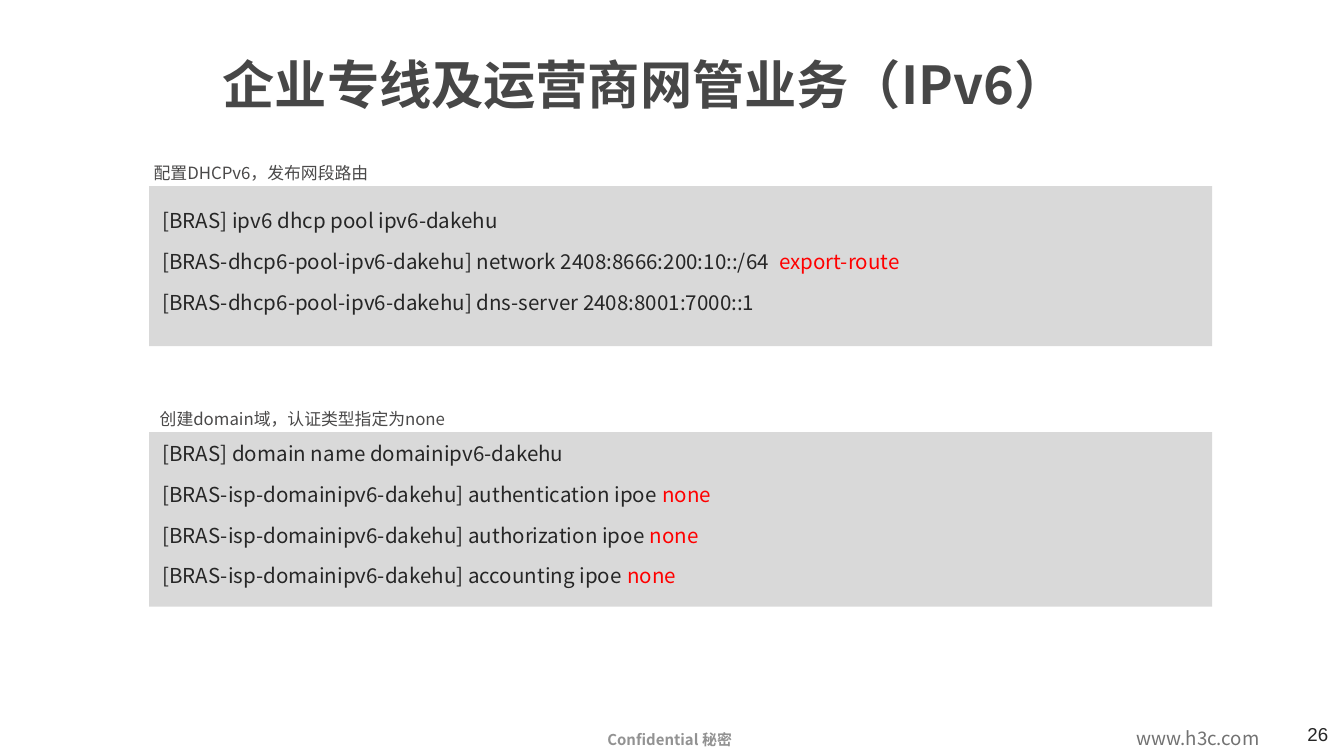
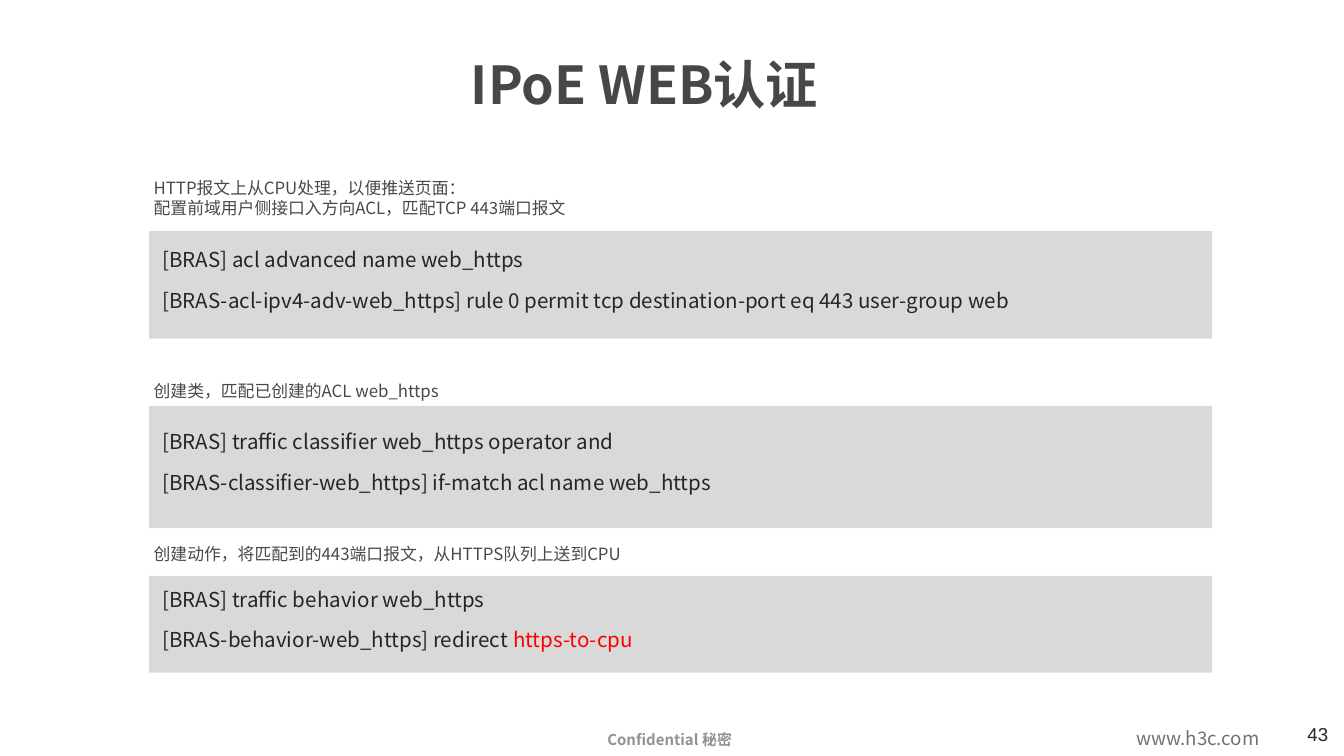
"""Build two slides of BRAS configuration steps with captions and command panels."""
from dataclasses import dataclass

from lxml.etree import SubElement
from pptx import Presentation
from pptx.dml.color import RGBColor
from pptx.enum.shapes import MSO_SHAPE as SHAPE
from pptx.enum.text import MSO_ANCHOR as ANCHOR, MSO_AUTO_SIZE as AUTO, PP_ALIGN as ALIGN
from pptx.oxml.ns import qn
from pptx.util import Emu, Pt


@dataclass(frozen=True)
class Style:
    size: int
    color: str
    bold: bool = False
    font: str = "Noto Sans CJK SC"


@dataclass(frozen=True)
class Theme:
    title: Style = Style(28, "474747", True)
    caption: Style = Style(9, "4A4949")
    code: Style = Style(11, "262626")
    secret: Style = Style(8, "929292", True)
    site: Style = Style(10, "727272")
    page: Style = Style(10, "262626", font="Arial")
    panel: str = "D9D9D9"
    accent: str = "FF0000"


THEME = Theme()
EMU_PER_PX = 4572
SLIDE_SIZE = 2000, 1125
TITLE_BOX = 100, 74, 1718, 100
PANEL_LEFT, PANEL_WIDTH = 222, 1582
PANEL_INSETS = 20, 48, 20, 70
CAPTION_WIDTH, CAPTION_LINE, CAPTION_PAD = 1582, 30, 20

FOOTERS = [
    ("Confidential 秘密", (884, 1077, 230, 48), THEME.secret, ANCHOR.MIDDLE, True),
    ("www.h3c.com", (1672, 1072, 226, 54), THEME.site, ANCHOR.MIDDLE, False),
]
PAGE_BOX = 1926, 1066, 74, 54

SLIDES = [
    {
        "title": "企业专线及运营商网管业务（IPv6）",
        "page": "26",
        "steps": [
            {
                "caption": ["配置DHCPv6，发布网段路由"],
                "caption_at": (209, 232),
                "panel": (277, 238),
                "code": [
                    ["[BRAS] ipv6 dhcp pool ipv6-dakehu"],
                    ["[BRAS-dhcp6-pool-ipv6-dakehu] network 2408:8666:200:10::/64  ", "export-route"],
                    ["[BRAS-dhcp6-pool-ipv6-dakehu] dns-server 2408:8001:7000::1"],
                ],
            },
            {
                "caption": ["创建domain域，认证类型指定为none"],
                "caption_at": (218, 598),
                "panel": (643, 260),
                "code": [
                    ["[BRAS] domain name domainipv6-dakehu"],
                    ["[BRAS-isp-domainipv6-dakehu] authentication ipoe ", "none"],
                    ["[BRAS-isp-domainipv6-dakehu] authorization ipoe ", "none"],
                    ["[BRAS-isp-domainipv6-dakehu] accounting ipoe ", "none"],
                ],
            },
        ],
    },
    {
        "title": "IPoE WEB认证",
        "page": "43",
        "steps": [
            {
                "caption": [
                    "HTTP报文上从CPU处理，以便推送页面：",
                    "配置前域用户侧接口入方向ACL，匹配TCP 443端口报文",
                ],
                "caption_at": (209, 255),
                "panel": (344, 160),
                "code": [
                    ["[BRAS] acl advanced name web_https"],
                    ["[BRAS-acl-ipv4-adv-web_https] rule 0 permit tcp destination-port eq 443 user-group web"],
                ],
            },
            {
                "caption": ["创建类，匹配已创建的ACL web_https"],
                "caption_at": (209, 557),
                "panel": (604, 182),
                "code": [
                    ["[BRAS] traffic classifier web_https operator and"],
                    ["[BRAS-classifier-web_https] if-match acl name web_https"],
                ],
            },
            {
                "caption": ["创建动作，将匹配到的443端口报文，从HTTPS队列上送到CPU"],
                "caption_at": (209, 799),
                "panel": (857, 144),
                "code": [
                    ["[BRAS] traffic behavior web_https"],
                    ["[BRAS-behavior-web_https] redirect ", "https-to-cpu"],
                ],
            },
        ],
    },
]


def px(*values):
    return [Emu(v * EMU_PER_PX) for v in values]


def rgb(color):
    return RGBColor.from_string(color)


def write(sp, lines, style, align=ALIGN.LEFT, anchor=ANCHOR.TOP, wrap=True):
    tf = sp.text_frame
    tf.word_wrap, tf.auto_size, tf.vertical_anchor = wrap, AUTO.NONE, anchor
    for i, (plain, *marked) in enumerate(lines):
        p = tf.add_paragraph() if i else tf.paragraphs[0]
        p.alignment = align
        font = p.font
        font.size, font.bold, font.name = Pt(style.size), style.bold, style.font
        font.color.rgb = rgb(style.color)
        defaults = p._p.pPr.find(qn("a:defRPr"))
        SubElement(defaults, qn("a:ea")).set("typeface", style.font)
        p.add_run().text = plain
        for text in marked:
            r = p.add_run()
            r.text = text
            r.font.color.rgb = rgb(THEME.accent)
    return tf


def add_label(slide, lines, box, style, **layout):
    sp = slide.shapes.add_textbox(*px(*box))
    write(sp, [[line] for line in lines], style, **layout)


def add_panel(slide, top, height, code):
    sp = slide.shapes.add_shape(SHAPE.RECTANGLE, *px(PANEL_LEFT, top, PANEL_WIDTH, height))
    sp.shadow.inherit = False
    sp.fill.solid()
    sp.fill.fore_color.rgb = rgb(THEME.panel)
    sp.line.fill.background()
    tf = write(sp, code, THEME.code, anchor=ANCHOR.MIDDLE)
    tf.margin_left, tf.margin_top, tf.margin_right, tf.margin_bottom = px(*PANEL_INSETS)
    for i, p in enumerate(tf.paragraphs):
        p.line_spacing = 1.2
        p.space_before = Pt(6 if i else 0)


def add_slide(prs, content):
    slide = prs.slides.add_slide(prs.slide_layouts[5])
    title = slide.shapes.title
    title.left, title.top, title.width, title.height = px(*TITLE_BOX)
    write(title, [[content["title"]]], THEME.title, ALIGN.CENTER, ANCHOR.MIDDLE)
    for text, box, style, anchor, wrap in FOOTERS:
        add_label(slide, [text], box, style, anchor=anchor, wrap=wrap)
    add_label(slide, [content["page"]], PAGE_BOX, THEME.page, wrap=False)
    for step in content["steps"]:
        add_panel(slide, *step["panel"], step["code"])
        height = CAPTION_PAD + CAPTION_LINE * len(step["caption"])
        box = *step["caption_at"], CAPTION_WIDTH, height
        add_label(slide, step["caption"], box, THEME.caption, align=ALIGN.JUSTIFY)


def main():
    prs = Presentation()
    prs.slide_width, prs.slide_height = px(*SLIDE_SIZE)
    for content in SLIDES:
        add_slide(prs, content)
    prs.save("out.pptx")


if __name__ == "__main__":
    main()
